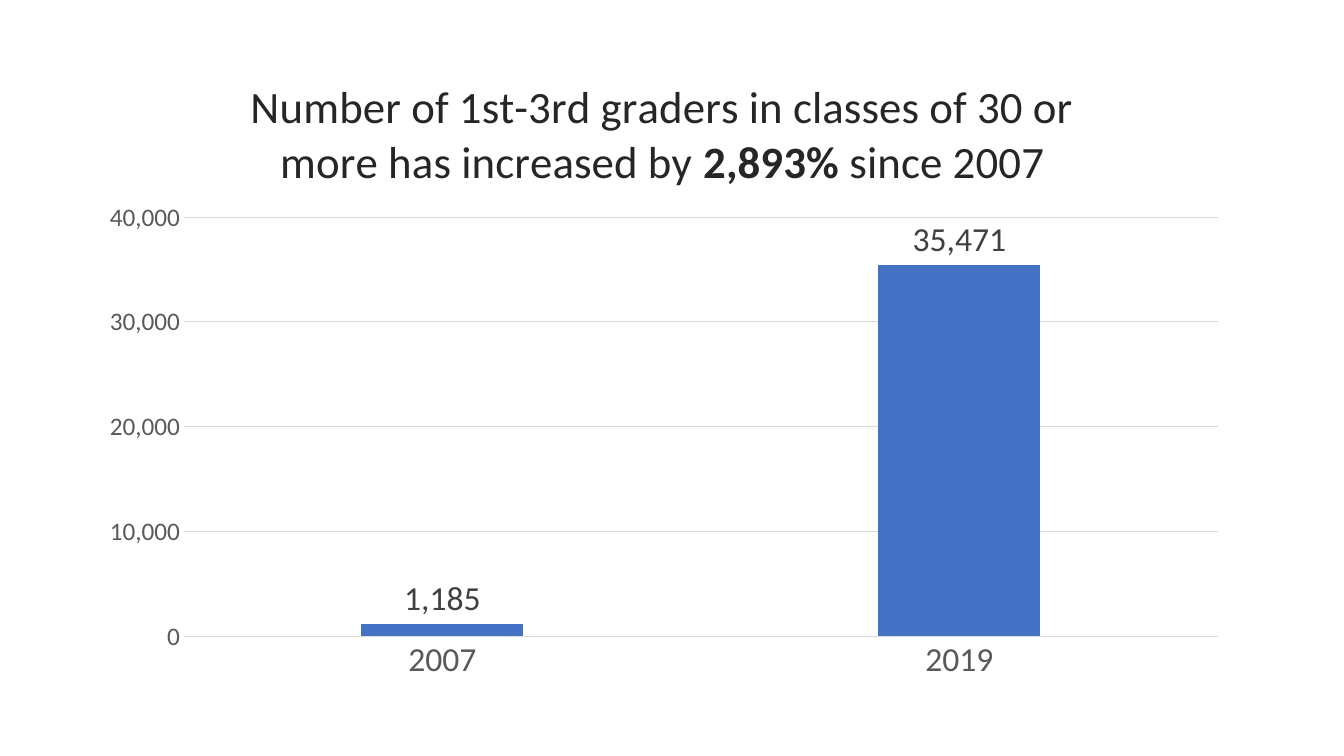
from lxml import etree
from pptx import Presentation
from pptx.chart.data import CategoryChartData
from pptx.dml.color import RGBColor
from pptx.enum.chart import XL_CHART_TYPE as ChartType
from pptx.enum.chart import XL_LABEL_POSITION as LabelPosition
from pptx.enum.chart import XL_TICK_MARK as TickMark
from pptx.oxml.ns import qn
from pptx.util import Inches, Pt

FONT = "Calibri"
BLUE = RGBColor(0x44, 0x72, 0xC4)
TITLE_GREY = RGBColor(0x26, 0x26, 0x26)
LABEL_GREY = RGBColor(0x40, 0x40, 0x40)
AXIS_GREY = RGBColor(0x59, 0x59, 0x59)
RULE_GREY = RGBColor(0xD9, 0xD9, 0xD9)

CLASS_COUNTS = {"2007": 1185, "2019": 35471}
TITLE_PARTS = [
    ("Number of 1st-3rd graders in classes of 30 or more has increased by ", False),
    ("2,893%", True),
    (" since 2007", False),
]


def format_font(font, size, color, bold=False):
    font.name = FONT
    font.size = Pt(size)
    font.bold = bold
    font.color.rgb = color


def format_rule(line):
    line.color.rgb = RULE_GREY
    line.width = Pt(0.75)


def set_layout(element, **fractions):
    """Place a chart title or plot area by fractions of the chart's size."""
    layout = element.find(qn("c:layout"))
    if layout is None:
        layout = etree.Element(qn("c:layout"))
        text = element.find(qn("c:tx"))
        if text is None:
            element.insert(0, layout)
        else:
            text.addnext(layout)
    for child in list(layout):
        layout.remove(child)
    manual = etree.SubElement(layout, qn("c:manualLayout"))
    if "w" in fractions:
        etree.SubElement(manual, qn("c:layoutTarget")).set("val", "inner")
    for mode in ("xMode", "yMode"):
        etree.SubElement(manual, qn(f"c:{mode}")).set("val", "edge")
    for name, fraction in fractions.items():
        etree.SubElement(manual, qn(f"c:{name}")).set("val", str(fraction))


def add_title(chart):
    chart.has_title = True
    title = chart.chart_title
    title.include_in_layout = False
    para = title.text_frame.paragraphs[0]
    format_font(para.font, 32, TITLE_GREY)
    for text, bold in TITLE_PARTS:
        span = para.add_run()
        span.text = text
        format_font(span.font, 32, TITLE_GREY, bold)
    set_layout(title._element, x=0.14, y=0.04)


def format_axes(chart):
    years, counts = chart.category_axis, chart.value_axis
    for axis, size in ((years, 24), (counts, 18)):
        axis.major_tick_mark = axis.minor_tick_mark = TickMark.NONE
        format_font(axis.tick_labels.font, size, AXIS_GREY)
    format_rule(years.format.line)
    counts.format.line.fill.background()
    counts.minimum_scale, counts.maximum_scale = 0, 40000
    counts.major_unit = 10000
    counts.tick_labels.number_format = "#,##0"
    counts.tick_labels.number_format_is_linked = False
    format_rule(counts.major_gridlines.format.line)


def format_columns(plot):
    plot.gap_width = 219
    plot.overlap = -27
    plot.vary_by_categories = False
    series = plot.series[0]
    series.format.fill.solid()
    series.format.fill.fore_color.rgb = BLUE
    labels = series.data_labels
    labels.show_value = True
    labels.position = LabelPosition.OUTSIDE_END
    labels.number_format = "#,##0"
    labels.number_format_is_linked = False
    format_font(labels.font, 24, LABEL_GREY)


def add_column_chart(page):
    data = CategoryChartData(number_format="#,##0")
    data.categories = list(CLASS_COUNTS)
    data.add_series("Series 1", list(CLASS_COUNTS.values()))
    chart = page.shapes.add_chart(
        ChartType.COLUMN_CLUSTERED,
        Inches(0.85), Inches(0.49), Inches(11.46), Inches(6.4), data,
    ).chart
    chart.has_legend = False
    chart.font.name = FONT
    chart.font.size = Pt(10)
    add_title(chart)
    format_axes(chart)
    format_columns(chart.plots[0])
    plot_area = chart._chartSpace.chart.plotArea
    set_layout(plot_area, x=0.085, y=0.26, w=0.895, h=0.65)


def main():
    deck = Presentation()
    deck.slide_width, deck.slide_height = Inches(13.33), Inches(7.5)
    page = deck.slides.add_slide(deck.slide_layouts[6])
    add_column_chart(page)
    deck.save("out.pptx")


if __name__ == "__main__":
    main()
